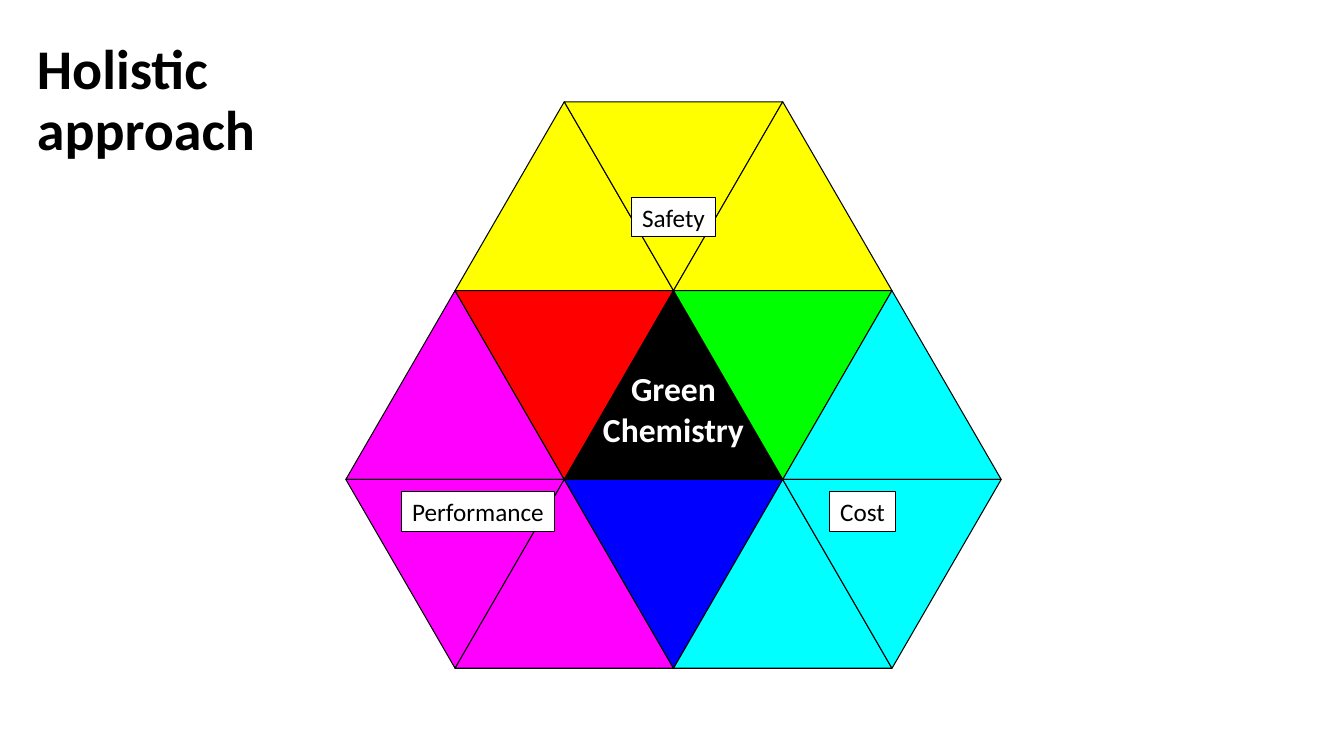
from pptx import Presentation
from pptx.dml.color import RGBColor
from pptx.enum.shapes import MSO_SHAPE
from pptx.enum.text import MSO_ANCHOR, MSO_AUTO_SIZE, PP_ALIGN
from pptx.util import Inches, Pt

TRIANGLE = MSO_SHAPE.ISOSCELES_TRIANGLE
RECT = MSO_SHAPE.RECTANGLE
MIDDLE = MSO_ANCHOR.MIDDLE
GROW, FIXED = MSO_AUTO_SIZE.SHAPE_TO_FIT_TEXT, MSO_AUTO_SIZE.NONE
LEFT, CENTER = PP_ALIGN.LEFT, PP_ALIGN.CENTER

BLACK = RGBColor(0x00, 0x00, 0x00)
WHITE = RGBColor(0xFF, 0xFF, 0xFF)
RED = RGBColor(0xFF, 0x00, 0x00)
GREEN = RGBColor(0x00, 0xFF, 0x00)
BLUE = RGBColor(0x00, 0x00, 0xFF)
CYAN = RGBColor(0x00, 0xFF, 0xFF)
PINK = RGBColor(0xFF, 0x00, 0xFF)
YELLOW = RGBColor(0xFF, 0xFF, 0x00)

# Fill of each triangle, by row and half-triangle column
TILES = [
    [None, YELLOW, YELLOW, YELLOW, None],
    [PINK, RED, BLACK, GREEN, CYAN],
    [PINK, PINK, BLUE, CYAN, CYAN],
]
# Text, centre column, centre row, width in columns
LABELS = [
    ("Safety", 3, 0.61, 0.77),
    ("Performance", 1.21, 2.17, 1.4),
    ("Cost", 4.73, 2.17, 0.6),
]


class Board:
    """Draws on a grid whose columns are half a triangle wide."""

    font = "Calibri"
    x, y = Inches(3.43), Inches(1.01)
    col, row = Inches(6.5) / 6, Inches(5.62) / 3

    def __init__(self, deck):
        self.wide, self.high = deck.slide_width, deck.slide_height
        self.slide = deck.slides.add_slide(deck.slide_layouts[5])

    def place(self, col, row, cols, rows):
        """Turn grid units into left, top, width and height."""
        return (int(self.x + col * self.col), int(self.y + row * self.row),
                int(cols * self.col), int(rows * self.row))

    def words(self, frame, lines, size, color, bold=False, align=CENTER):
        """Fill a text frame with one paragraph per line."""
        for i, line in enumerate(lines):
            para = frame.add_paragraph() if i else frame.paragraphs[0]
            para.alignment = align
            run = para.add_run()
            run.text = line
            font = run.font
            font.name, font.size, font.bold = self.font, Pt(size), bold
            font.color.rgb = color

    def shape(self, kind, box, fill):
        item = self.slide.shapes.add_shape(kind, *box)
        item.shadow.inherit = False
        item.fill.solid()
        item.fill.fore_color.rgb = fill
        item.line.color.rgb = BLACK
        item.line.width = Pt(0.75)
        return item

    def tile(self, col, row, fill):
        item = self.shape(TRIANGLE, self.place(col, row, 2, 1), fill)
        if (col + row) % 2 == 0:
            item.rotation = 180

    def label(self, text, col, row, cols):
        rows = 0.21
        box = self.place(col - cols / 2, row - rows / 2, cols, rows)
        frame = self.shape(RECT, box, WHITE).text_frame
        frame.word_wrap, frame.auto_size = False, GROW
        self.words(frame, [text], 18, BLACK)

    def core(self, lines, col, row, cols, rows):
        box = self.place(col - cols / 2, row - rows / 2, cols, rows)
        frame = self.slide.shapes.add_textbox(*box).text_frame
        frame.word_wrap, frame.auto_size = False, GROW
        self.words(frame, lines, 24, WHITE, True)

    def title(self, text, left, top, width, height):
        """Place the title by shares of the slide's size."""
        item = self.slide.shapes.title
        item.left, item.top = int(left * self.wide), int(top * self.high)
        item.width, item.height = int(width * self.wide), int(height * self.high)
        frame = item.text_frame
        frame.word_wrap, frame.auto_size = True, FIXED
        frame.vertical_anchor = MIDDLE
        self.words(frame, [text], 40, BLACK, True, LEFT)
        frame.paragraphs[0].line_spacing = 0.9


def main():
    deck = Presentation()
    deck.slide_width, deck.slide_height = Inches(13.33), Inches(7.5)
    board = Board(deck)
    for row, fills in enumerate(TILES):
        for col, fill in enumerate(fills):
            if fill is not None:
                board.tile(col, row, fill)
    for label in LABELS:
        board.label(*label)
    board.core(["Green", "Chemistry"], 3, 1.63, 1.5, 0.49)
    board.title("Holistic approach", 0.02, 0.04, 0.29, 0.19)
    deck.save("out.pptx")


if __name__ == "__main__":
    main()
